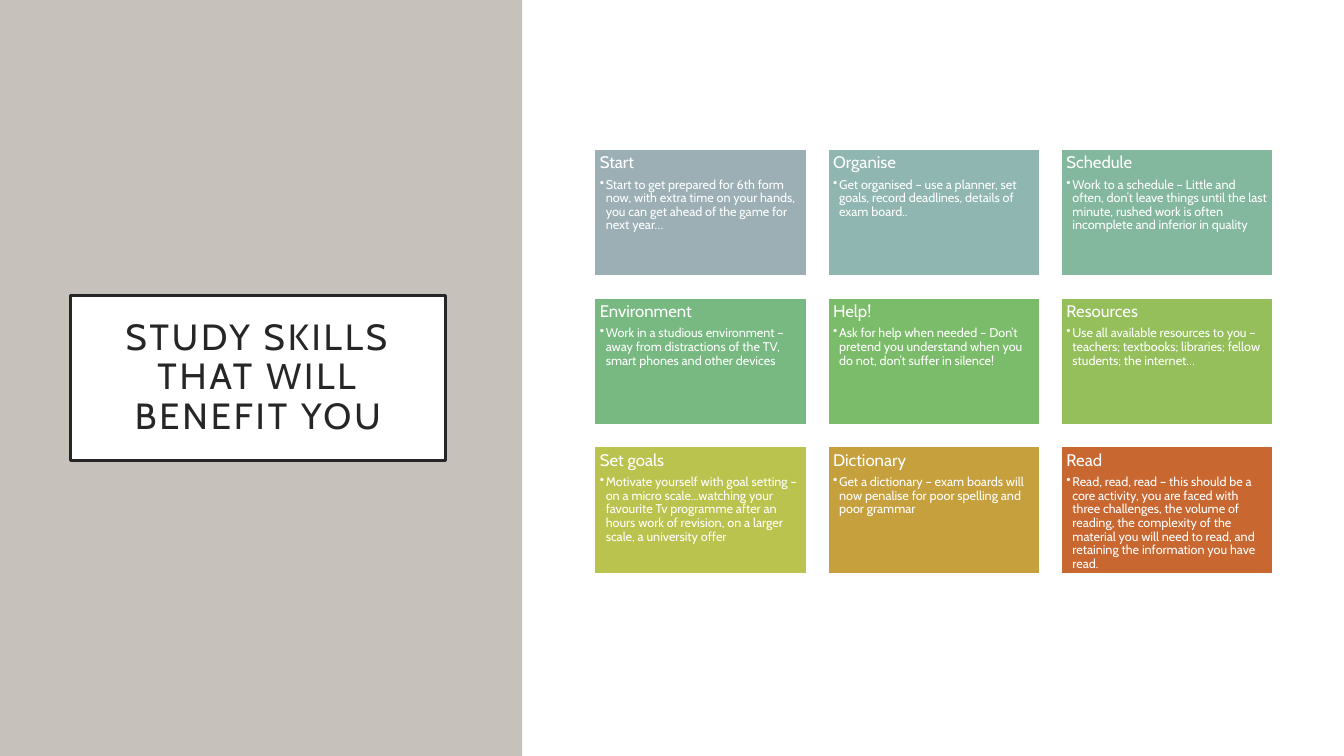
from lxml.etree import SubElement
from pptx import Presentation
from pptx.dml.color import RGBColor
from pptx.enum.shapes import MSO_SHAPE
from pptx.enum.text import MSO_ANCHOR, PP_ALIGN
from pptx.oxml.ns import qn
from pptx.util import Inches, Pt

WHITE = RGBColor(0xFF, 0xFF, 0xFF)
INK = RGBColor(0x26, 0x26, 0x26)
STONE = RGBColor(0xC6, 0xC1, 0xBA)
SLATE = RGBColor(0x9B, 0xAF, 0xB5)
TEAL = RGBColor(0x90, 0xB6, 0xB1)
SAGE = RGBColor(0x83, 0xB7, 0x9E)
JADE = RGBColor(0x77, 0xB9, 0x81)
GREEN = RGBColor(0x7A, 0xBC, 0x69)
LEAF = RGBColor(0x94, 0xBF, 0x5B)
LIME = RGBColor(0xBA, 0xC3, 0x4D)
GOLD = RGBColor(0xC7, 0xA0, 0x3E)
RUST = RGBColor(0xC9, 0x67, 0x31)

SKILLS = [
    ("Start", SLATE, "Start to get prepared for 6th form now, with extra time on your hands, "
     "you can get ahead of the game for next year…"),
    ("Organise", TEAL, "Get organised – use a planner, set goals, record deadlines, "
     "details of exam board.."),
    ("Schedule", SAGE, "Work to a schedule – Little and often, don’t leave things until the "
     "last minute, rushed work is often incomplete and inferior in quality"),
    ("Environment", JADE, "Work in a studious environment – away from distractions of the TV, "
     "smart phones and other devices"),
    ("Help!", GREEN, "Ask for help when needed – Don’t pretend you understand when you "
     "do not, don’t suffer in silence!"),
    ("Resources", LEAF, "Use all available resources to you – teachers; textbooks; libraries; "
     "fellow students; the internet…"),
    ("Set goals", LIME, "Motivate yourself with goal setting – on a micro scale...watching your "
     "favourite Tv programme after an hours work of revision, on a larger scale, "
     "a university offer"),
    ("Dictionary", GOLD, "Get a dictionary – exam boards will now penalise for poor spelling "
     "and poor grammar"),
    ("Read", RUST, "Read, read, read – this should be a core activity, you are faced with "
     "three challenges, the volume of reading, the complexity of the material you will "
     "need to read, and retaining the information you have read."),
]


class Deck:
    """Holds the style and the current slide; places are percent of the slide's size."""
    font = "Cabin"
    left, top = 44.25, 19.73
    wide, high = 15.75, 16.8
    col, row = 17.36, 19.67

    def __init__(self):
        self.prs = Presentation()
        self.prs.slide_width = Inches(13.33)
        self.prs.slide_height = Inches(7.5)
        self.slide = self.prs.slides.add_slide(self.prs.slide_layouts[6])

    def block(self, x, y, w, h, fill, line=None, weight=1):
        across, down = self.prs.slide_width / 100, self.prs.slide_height / 100
        shape = self.slide.shapes.add_shape(
            MSO_SHAPE.RECTANGLE, int(x * across), int(y * down), int(w * across), int(h * down))
        shape.shadow.inherit = False
        shape.fill.solid()
        shape.fill.fore_color.rgb = fill
        if line is None:
            shape.line.fill.background()
        else:
            shape.line.color.rgb = line
            shape.line.width = Pt(weight)
        return shape

    def frame(self, shape, inset, anchor):
        frame = shape.text_frame
        frame.word_wrap = True
        frame.vertical_anchor = anchor
        frame.margin_left = frame.margin_right = Inches(inset)
        frame.margin_top = frame.margin_bottom = Inches(inset)
        return frame

    def style(self, para, size, color, after=0, align=PP_ALIGN.LEFT):
        para.alignment = align
        para.line_spacing = 0.9
        para.space_after = Pt(after)
        for run in para.runs:
            run.font.name = self.font
            run.font.size = Pt(size)
            run.font.color.rgb = color

    def bullet(self, para):
        props = para._p.get_or_add_pPr()
        props.set("marL", str(Inches(0.06)))
        props.set("indent", str(-Inches(0.06)))
        SubElement(props, qn("a:buChar")).set("char", "•")

    def title(self, text, x, y, w, h):
        shape = self.block(x, y, w, h, WHITE, INK, 2.5)
        frame = self.frame(shape, 0.2, MSO_ANCHOR.MIDDLE)
        frame.text = text
        para = frame.paragraphs[0]
        self.style(para, 26, INK, align=PP_ALIGN.CENTER)
        para.runs[0].font._element.set("spc", "200")

    def card(self, place, head, fill, body):
        row, col = divmod(place, 3)
        shape = self.block(self.left + col * self.col, self.top + row * self.row,
                           self.wide, self.high, fill, WHITE)
        frame = self.frame(shape, 0.05, MSO_ANCHOR.TOP)
        frame.text = f"{head}\n{body}"
        first, second = frame.paragraphs
        self.style(first, 12, WHITE, after=4.2)
        self.style(second, 9, WHITE, after=1.35)
        self.bullet(second)


def main():
    deck = Deck()
    deck.block(0, 0, 38.85, 100, STONE)
    deck.title("STUDY SKILLS THAT WILL BENEFIT YOU", 5.25, 39.07, 27.9, 21.87)
    deck.block(39, 0, 61, 100, WHITE)
    for place, skill in enumerate(SKILLS):
        deck.card(place, *skill)
    deck.prs.save("out.pptx")


if __name__ == "__main__":
    main()
